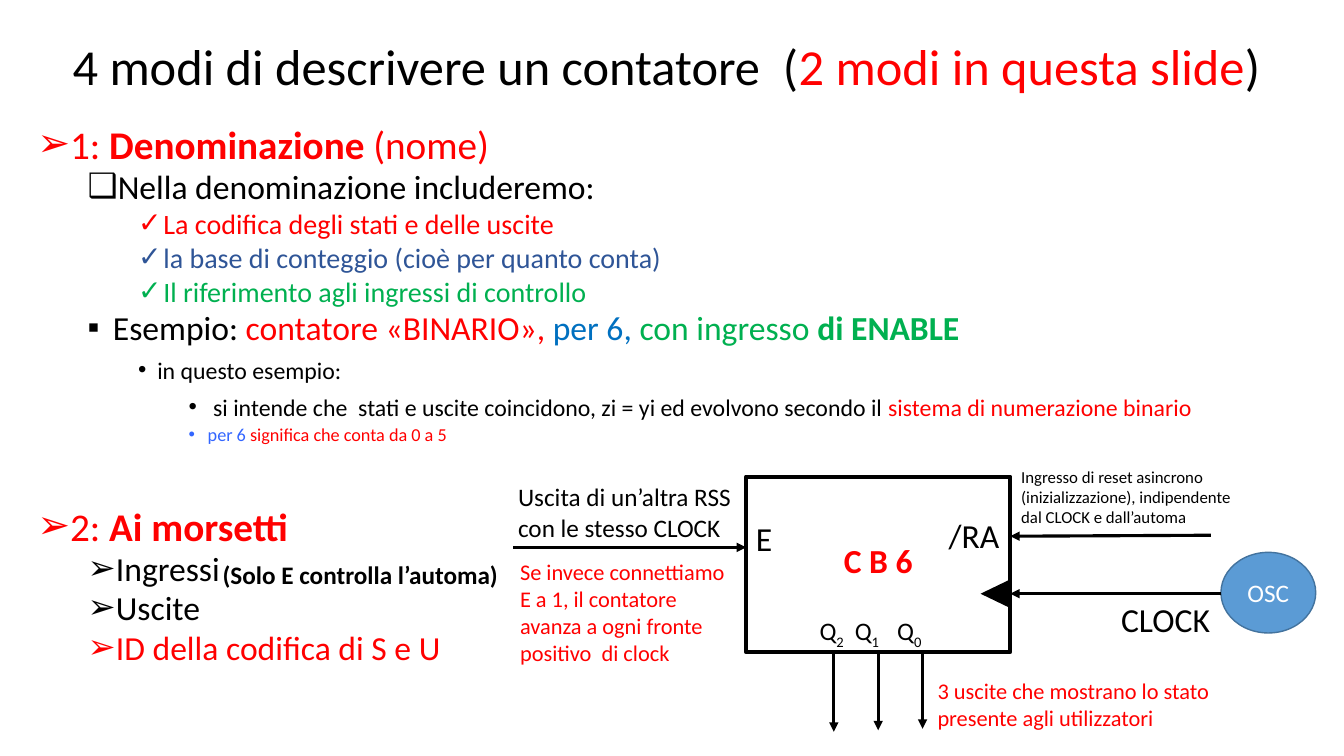
from lxml.etree import SubElement
from pptx import Presentation
from pptx.dml.color import RGBColor
from pptx.enum.shapes import MSO_CONNECTOR, MSO_SHAPE
from pptx.enum.text import MSO_ANCHOR, MSO_AUTO_SIZE, PP_ALIGN
from pptx.oxml.ns import qn
from pptx.util import Inches, Pt


class Theme:
    font = "Calibri"
    black, white, red, green = "000000", "FFFFFF", "FF0000", "00B050"
    navy, blue, bright_blue = "2F5597", "0070C0", "3366FF"
    oscillator, oscillator_line = "5B9BD5", "43739E"
    title, heading, item, detail, label = 36, 28, 24, 20, 18
    note, example, remark, caption = 16, 17, 13, 12
    arrow_width, frame_width = 2.25, 3


# Content: a run is (text, colour) or (text, colour, style)
TITLE = [("4 modi di descrivere un contatore  (", Theme.black),
         ("2 modi in questa slide", Theme.red), (")", Theme.black)]

# Outline styles: level, left margin, hanging indent, size, space before
STYLES = {
    "heading": (0, 0.25, 0.25, Theme.heading, 10),
    "item": (1, 0.75, 0.25, Theme.item, 5),
    "detail": (2, 1.25, 0.25, Theme.detail, 5),
    "example": (3, 1.19, 0.19, Theme.example, 10),
    "meaning": (4, 1.69, 0.19, Theme.example, 10),
    "remark": (3, 1.69, 0.19, Theme.remark, 5),
    "second heading": (0, 0.25, 0.25, Theme.heading, 47.3),
}
OUTLINE = [
    ("heading", "➢", [("1: ", Theme.red), ("Denominazione", Theme.red, "bold"),
                      (" (nome)", Theme.red)]),
    ("item", "❑", [("Nella denominazione includeremo:", Theme.black)]),
    ("detail", "✓", [("La codifica degli stati e delle uscite", Theme.red)]),
    ("detail", "✓", [("la base di conteggio (cioè per quanto conta)", Theme.navy)]),
    ("detail", "✓", [("Il riferimento agli ingressi di controllo", Theme.green)]),
    ("item", "▪", [("Esempio:", Theme.black), (" contatore «BINARIO», ", Theme.red),
                   ("per 6, ", Theme.blue), ("con ingresso ", Theme.green),
                   ("di ENABLE", Theme.green, "bold")]),
    ("example", "•", [("in questo esempio:", Theme.black)]),
    ("meaning", "•", [
        (" si intende che  stati e uscite coincidono, zi = yi ed evolvono secondo il ",
         Theme.black),
        ("sistema di numerazione binario", Theme.red)]),
    ("remark", "•", [("per 6 ", Theme.bright_blue),
                     ("significa che conta da 0 a 5", Theme.red)]),
    ("second heading", "➢", [("2: ", Theme.red), ("Ai morsetti", Theme.red, "bold")]),
    ("item", "➢", [("Ingressi", Theme.black)]),
    ("item", "➢", [("Uscite", Theme.black)]),
    ("item", "➢", [("ID della codifica di S e U", Theme.red)]),
]

# Labels: box, size, wrap, runs
LABELS = [
    ((7.4, 5.09, 0.37, 0.54), Theme.item, False, [("E", Theme.black)]),
    ((9.31, 5.06, 0.71, 0.54), Theme.item, False, [("/RA", Theme.black)]),
    ((8.27, 5.31, 0.88, 0.54), Theme.item, False, [("C B 6", Theme.red, "bold")]),
    ((11.02, 5.89, 1.09, 0.5), Theme.item, False, [("CLOCK", Theme.black)]),
    ((2.11, 5.5, 2.95, 0.4), Theme.label, False,
     [("(Solo E controlla l’automa)", Theme.black, "bold")]),
    ((10.03, 4.58, 2.36, 0.71), Theme.caption, True,
     [("Ingresso di reset asincrono (inizializzazione), indipendente "
       "dal CLOCK e dall’automa", Theme.black)]),
    ((5.04, 4.73, 2.36, 0.71), Theme.label, True,
     [("Uscita di un’altra RSS con le stesso CLOCK", Theme.black)]),
    ((5.06, 5.49, 2.36, 1.18), Theme.note, True,
     [("Se invece connettiamo E a 1, il contatore avanza a ogni fronte "
       "positivo  di clock", Theme.red)]),
    ((9.2, 6.67, 3.19, 0.64), Theme.note, True,
     [("3 uscite che mostrano lo stato presente agli utilizzatori", Theme.red)]),
]
OUTPUTS = [("Q", Theme.black), ("2", Theme.black, "subscript"),
           ("\tQ", Theme.black), ("1", Theme.black, "subscript"),
           ("\tQ", Theme.black), ("0", Theme.black, "subscript")]
OUTPUT_TABS = (0.35, 0.77)

# Geometry of the counter block and its terminals
COUNTER = (7.4, 4.73, 2.62, 1.74)
CLOCK_WEDGE = (9.73, 5.75, 0.27, 0.28)
OSCILLATOR = (12.11, 5.48, 0.94, 0.8)
COUNTER_RIGHT = COUNTER[0] + COUNTER[2]
INPUT_ARROWS = [((5.09, 5.43), (COUNTER[0], 5.43)),
                ((12.01, 5.31), (COUNTER_RIGHT, 5.32)),
                ((OSCILLATOR[0], 5.89), (COUNTER_RIGHT, 5.89))]
OUTPUT_ARROWS = [((8.27 + 0.44 * i, 6.47 - 0.01 * i),
                  (8.27 + 0.44 * i, 7.26 - 0.015 * i)) for i in range(3)]


def color(value):
    return RGBColor.from_string(value)


def box_lengths(box):
    return [Inches(value) for value in box]


def write(paragraph, runs, size, align=PP_ALIGN.LEFT, line_spacing=None, space_before=0):
    paragraph.alignment = align
    paragraph.space_before = Pt(space_before)
    if line_spacing:
        paragraph.line_spacing = line_spacing
    for text, run_color, *style in runs:
        run = paragraph.add_run()
        run.text = text
        run.font.name = Theme.font
        run.font.size = Pt(size)
        run.font.bold = "bold" in style
        run.font.color.rgb = color(run_color)
        if "subscript" in style:
            run._r.get_or_add_rPr().set("baseline", "-25000")


def place(placeholder, box):
    placeholder.left, placeholder.top, placeholder.width, placeholder.height = box_lengths(box)
    placeholder.text_frame.auto_size = MSO_AUTO_SIZE.NONE
    return placeholder.text_frame


def add_bullet(paragraph, symbol, margin, hanging):
    properties = paragraph._p.get_or_add_pPr()
    properties.set("marL", str(Inches(margin)))
    properties.set("indent", str(-Inches(hanging)))
    SubElement(properties, qn("a:buFont")).set("typeface", "Arial")
    SubElement(properties, qn("a:buChar")).set("char", symbol)


def add_label(slide, box, size, wrap, runs):
    frame = slide.shapes.add_textbox(*box_lengths(box)).text_frame
    frame.word_wrap = wrap
    frame.auto_size = MSO_AUTO_SIZE.SHAPE_TO_FIT_TEXT
    write(frame.paragraphs[0], runs, size)
    return frame.paragraphs[0]


def add_figure(slide, kind, box, fill=None, line=None, width=1):
    shape = slide.shapes.add_shape(kind, *box_lengths(box))
    shape.shadow.inherit = False
    for part, value in ((shape.fill, fill), (shape.line.fill, line)):
        if value:
            part.solid()
            part.fore_color.rgb = color(value)
        else:
            part.background()
    if line:
        shape.line.width = Pt(width)
    return shape


def add_arrow(slide, start, end):
    arrow = slide.shapes.add_connector(MSO_CONNECTOR.STRAIGHT, *box_lengths(start + end))
    arrow.line.color.rgb = color(Theme.black)
    arrow.line.width = Pt(Theme.arrow_width)
    SubElement(arrow.line._get_or_add_ln(), qn("a:tailEnd")).set("type", "triangle")
    SubElement(arrow._element.spPr, qn("a:effectLst"))


def main():
    presentation = Presentation()
    presentation.slide_width, presentation.slide_height = Inches(13.33), Inches(7.5)
    slide = presentation.slides.add_slide(presentation.slide_layouts[1])

    # Title and outline
    title = place(slide.shapes.title, (0.62, 0.22, 12.36, 0.93))
    title.vertical_anchor = MSO_ANCHOR.MIDDLE
    write(title.paragraphs[0], TITLE, Theme.title, line_spacing=0.9)
    body = place(slide.placeholders[1], (0.27, 1.23, 13.06, 5.64))
    for index, (style, symbol, runs) in enumerate(OUTLINE):
        level, margin, hanging, size, space = STYLES[style]
        paragraph = body.add_paragraph() if index else body.paragraphs[0]
        paragraph.level = level
        write(paragraph, runs, size, line_spacing=0.8, space_before=space)
        add_bullet(paragraph, symbol, margin, hanging)

    # Counter block with its clock wedge and oscillator
    wedge = add_figure(slide, MSO_SHAPE.ISOSCELES_TRIANGLE, CLOCK_WEDGE, fill=Theme.black)
    wedge.rotation = 270
    add_figure(slide, MSO_SHAPE.RECTANGLE, COUNTER, line=Theme.black, width=Theme.frame_width)
    oscillator = add_figure(slide, MSO_SHAPE.OVAL, OSCILLATOR,
                            fill=Theme.oscillator, line=Theme.oscillator_line)
    oscillator.text_frame.vertical_anchor = MSO_ANCHOR.MIDDLE
    write(oscillator.text_frame.paragraphs[0], [("OSC", Theme.white)], Theme.label,
          align=PP_ALIGN.CENTER)

    # Terminals
    for start, end in INPUT_ARROWS + OUTPUT_ARROWS:
        add_arrow(slide, start, end)
    for label in LABELS:
        add_label(slide, *label)
    outputs = add_label(slide, (8.03, 6.06, 1.4, 0.43), Theme.label, True, OUTPUTS)
    tabs = SubElement(outputs._p.get_or_add_pPr(), qn("a:tabLst"))
    for position in OUTPUT_TABS:
        SubElement(tabs, qn("a:tab"), pos=str(Inches(position)), algn="l")

    presentation.save("out.pptx")


if __name__ == "__main__":
    main()
